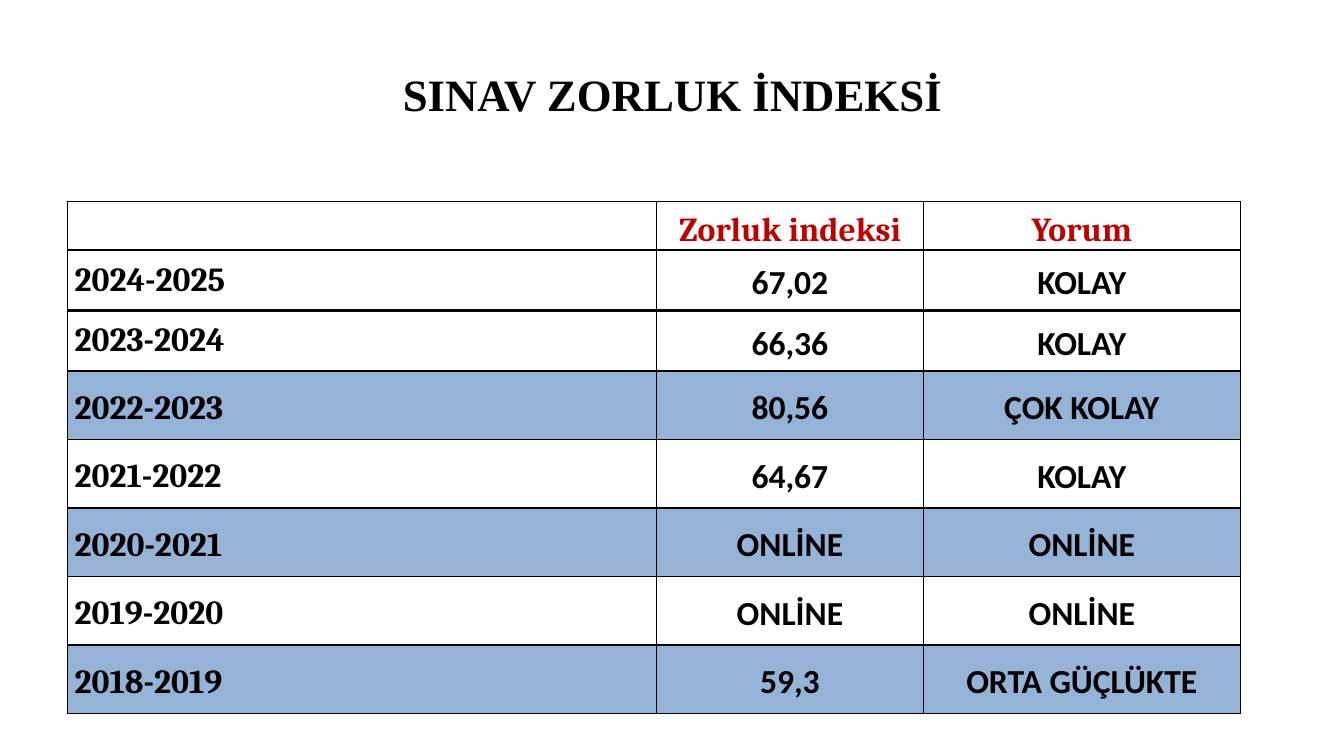
from dataclasses import dataclass

from pptx import Presentation
from pptx.dml.color import RGBColor
from pptx.enum.text import MSO_ANCHOR, PP_ALIGN
from pptx.oxml import parse_xml
from pptx.oxml.ns import nsdecls
from pptx.table import _Cell
from pptx.text.text import _Paragraph
from pptx.util import Inches, Pt

BLACK = RGBColor(0x00, 0x00, 0x00)
RED = RGBColor(0xC0, 0x00, 0x00)
BLUE = RGBColor(0x95, 0xB3, 0xD7)
THIN, THICK = 1, 2.25
COL_WIDTHS = (5.84, 2.65, 3.14)


@dataclass
class ExamRow:
    texts: tuple[str, str, str]
    height: float = 0.68
    shaded: bool = False
    header: bool = False
    spacing: float = 1.15
    top: float = THIN
    bottom: float = THIN


ROWS = [
    ExamRow(("", "Zorluk indeksi", "Yorum"), 0.48, header=True, bottom=THICK),
    ExamRow(("2024-2025", "67,02", "KOLAY"), 0.6, spacing=1.0, top=THICK, bottom=THICK),
    ExamRow(("2023-2024", "66,36", "KOLAY"), 0.6, spacing=1.0, top=THICK),
    ExamRow(("2022-2023", "80,56", "ÇOK KOLAY"), shaded=True),
    ExamRow(("2021-2022", "64,67", "KOLAY")),
    ExamRow(("2020-2021", "ONLİNE", "ONLİNE"), shaded=True),
    ExamRow(("2019-2020", "ONLİNE", "ONLİNE")),
    ExamRow(("2018-2019", "59,3", "ORTA GÜÇLÜKTE"), shaded=True),
]


def add_run(p: _Paragraph, text: str, font: str, size: float, color: RGBColor) -> None:
    r = p.add_run()
    r.text = text
    r.font.name = font
    r.font.size = Pt(size)
    r.font.bold = True
    r.font.color.rgb = color


def set_borders(cell: _Cell, row: ExamRow) -> None:
    tcPr = cell._tc.get_or_add_tcPr()
    sides = (("L", THIN), ("R", THIN), ("T", row.top), ("B", row.bottom))
    for i, (side, width) in enumerate(sides):
        tcPr.insert(i, parse_xml(
            f'<a:ln{side} {nsdecls("a")} w="{Pt(width)}"><a:solidFill>'
            f'<a:srgbClr val="{BLACK}"/></a:solidFill></a:ln{side}>'))


def fill_cell(cell: _Cell, row: ExamRow, col: int) -> None:
    if row.shaded:
        cell.fill.solid()
        cell.fill.fore_color.rgb = BLUE
    else:
        cell.fill.background()
    set_borders(cell, row)
    if not row.texts[col]:
        return
    cell.margin_left = cell.margin_right = Inches(0.07)
    cell.margin_top = cell.margin_bottom = 0
    cell.vertical_anchor = MSO_ANCHOR.BOTTOM if row.header else MSO_ANCHOR.MIDDLE
    p = cell.text_frame.paragraphs[0]
    p.alignment = PP_ALIGN.CENTER if col else PP_ALIGN.LEFT
    p.line_spacing = 1.15 if col else row.spacing
    font = "Cambria" if row.header or col == 0 else "Calibri"
    add_run(p, row.texts[col], font, 24, RED if row.header else BLACK)


def main() -> None:
    prs = Presentation()
    prs.slide_width, prs.slide_height = Inches(13.33), Inches(7.5)
    s = prs.slides.add_slide(prs.slide_layouts[5])

    title = s.shapes.title
    title.left, title.top = Inches(0.67), Inches(0.3)
    title.width, title.height = Inches(12), Inches(1.25)
    tf = title.text_frame
    tf.vertical_anchor = MSO_ANCHOR.MIDDLE
    p = tf.paragraphs[0]
    p.alignment = PP_ALIGN.CENTER
    add_run(p, "SINAV ZORLUK İNDEKSİ", "Times New Roman", 32, BLACK)

    table = s.shapes.add_table(
        len(ROWS), len(COL_WIDTHS), Inches(0.67), Inches(2),
        Inches(sum(COL_WIDTHS)), Inches(sum(row.height for row in ROWS))).table
    table.first_row = table.horz_banding = False
    for col, width in enumerate(COL_WIDTHS):
        table.columns[col].width = Inches(width)
    for i, row in enumerate(ROWS):
        table.rows[i].height = Inches(row.height)
        for col in range(len(COL_WIDTHS)):
            fill_cell(table.cell(i, col), row, col)

    prs.save("out.pptx")


if __name__ == "__main__":
    main()
